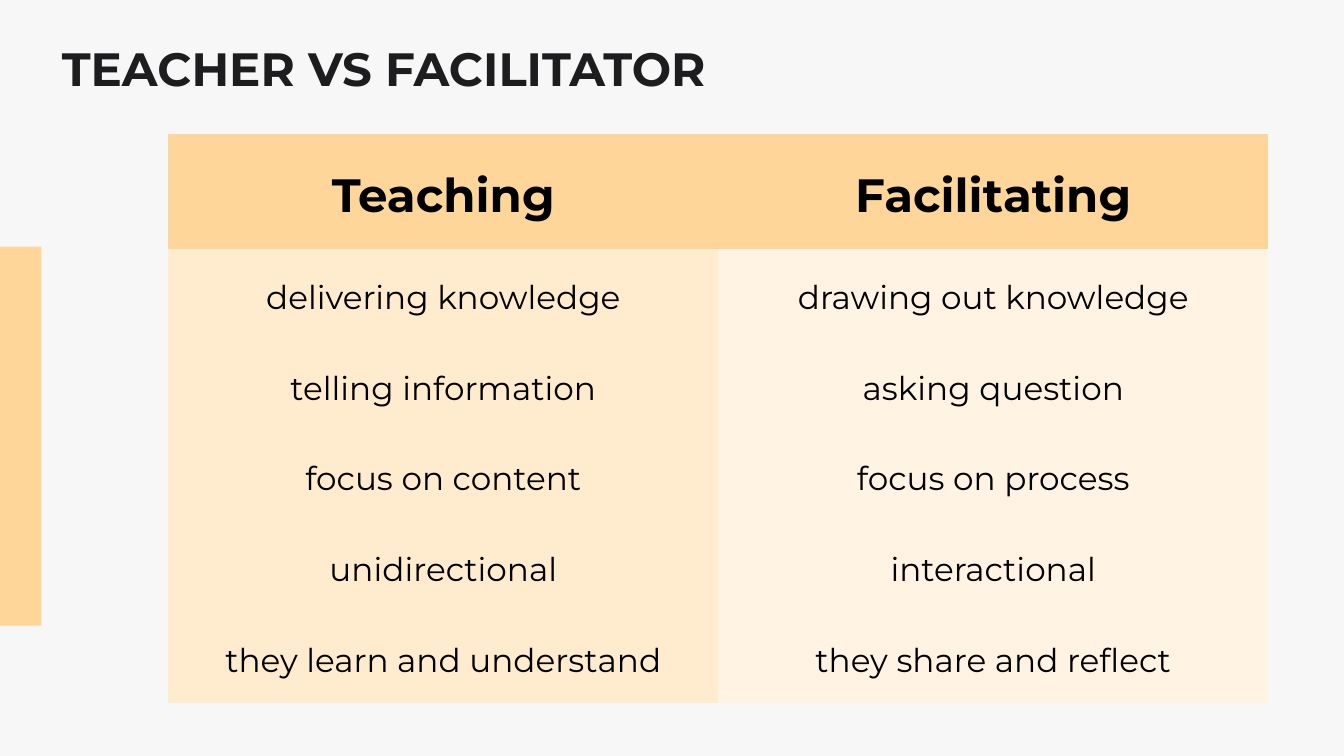
import pptx
import pptx.util
import pptx.dml.color
import pptx.enum.shapes
import pptx.enum.text
import pptx.oxml
import pptx.oxml.ns

COLORS = {
    "background": "F7F7F7",
    "accent": "FFD699",
    "teaching": "FFEBCD",
    "facilitating": "FFF4E3",
    "title": "1D1D1F",
    "text": "000000",
}
FONT = "Montserrat"
COMPARISON = [
    ("Teaching", "Facilitating"),
    ("delivering knowledge", "drawing out knowledge"),
    ("telling information", "asking question"),
    ("focus on content", "focus on process"),
    ("unidirectional", "interactional"),
    ("they learn and understand", "they share and reflect"),
]


def paint(fill, color):
    fill.solid()
    fill.fore_color.rgb = pptx.dml.color.RGBColor.from_string(COLORS[color])


def write(frame, text, size, bold, color, align):
    frame.text = text
    paragraph = frame.paragraphs[0]
    paragraph.alignment = align
    paragraph.line_spacing = pptx.util.Pt(size * 1.4)
    font = paragraph.runs[0].font
    font.name = FONT
    font.size = pptx.util.Pt(size)
    font.bold = bold
    font.color.rgb = pptx.dml.color.RGBColor.from_string(COLORS[color])


deck = pptx.Presentation()
deck.slide_width = pptx.util.Inches(20)
deck.slide_height = pptx.util.Inches(11.25)
col = deck.slide_width / 100
row = deck.slide_height / 100

slide = deck.slides.add_slide(deck.slide_layouts.get_by_name("Title Only"))
paint(slide.background.fill, "background")

comparison = slide.shapes.add_table(
    len(COMPARISON), 2,
    int(12.53 * col), int(17.7 * row), int(81.84 * col), int(75.3 * row),
).table
for column in comparison.columns:
    column.width = int(40.92 * col)
for r, pair in enumerate(COMPARISON):
    heading = r == 0
    comparison.rows[r].height = int((15.3 if heading else 12) * row)
    for c, (wording, side) in enumerate(zip(pair, ("teaching", "facilitating"))):
        cell = comparison.cell(r, c)
        cell.margin_left = cell.margin_right = pptx.util.Inches(0.21)
        cell.margin_top = cell.margin_bottom = pptx.util.Inches(0.21)
        cell.vertical_anchor = pptx.enum.text.MSO_ANCHOR.MIDDLE
        properties = cell._tc.get_or_add_tcPr()
        for edge in ("lnL", "lnR", "lnT", "lnB"):
            properties.append(pptx.oxml.parse_xml(
                f'<a:{edge} {pptx.oxml.ns.nsdecls("a")} w="0"><a:noFill/></a:{edge}>'
            ))
        paint(cell.fill, "accent" if heading else side)
        write(cell.text_frame, wording, 50 if heading else 35, heading,
              "text", pptx.enum.text.PP_ALIGN.CENTER)

side_bar = slide.shapes.add_shape(
    pptx.enum.shapes.MSO_SHAPE.RECTANGLE,
    int(-0.15 * col), int(32.63 * row), int(3.23 * col), int(50.13 * row),
)
side_bar.shadow.inherit = False
side_bar.line.fill.background()
paint(side_bar.fill, "accent")

title = slide.shapes.title
title.left, title.top = int(4.6 * col), int(4.1 * row)
title.width, title.height = int(48.85 * col), int(8.27 * row)
heading_frame = title.text_frame
heading_frame.margin_left = heading_frame.margin_right = 0
heading_frame.margin_top = heading_frame.margin_bottom = 0
heading_frame.vertical_anchor = pptx.enum.text.MSO_ANCHOR.TOP
heading_frame.word_wrap = True
heading_frame.auto_size = pptx.enum.text.MSO_AUTO_SIZE.SHAPE_TO_FIT_TEXT
write(heading_frame, "TEACHER VS FACILITATOR", 50, True,
      "title", pptx.enum.text.PP_ALIGN.LEFT)

deck.save("out.pptx")
